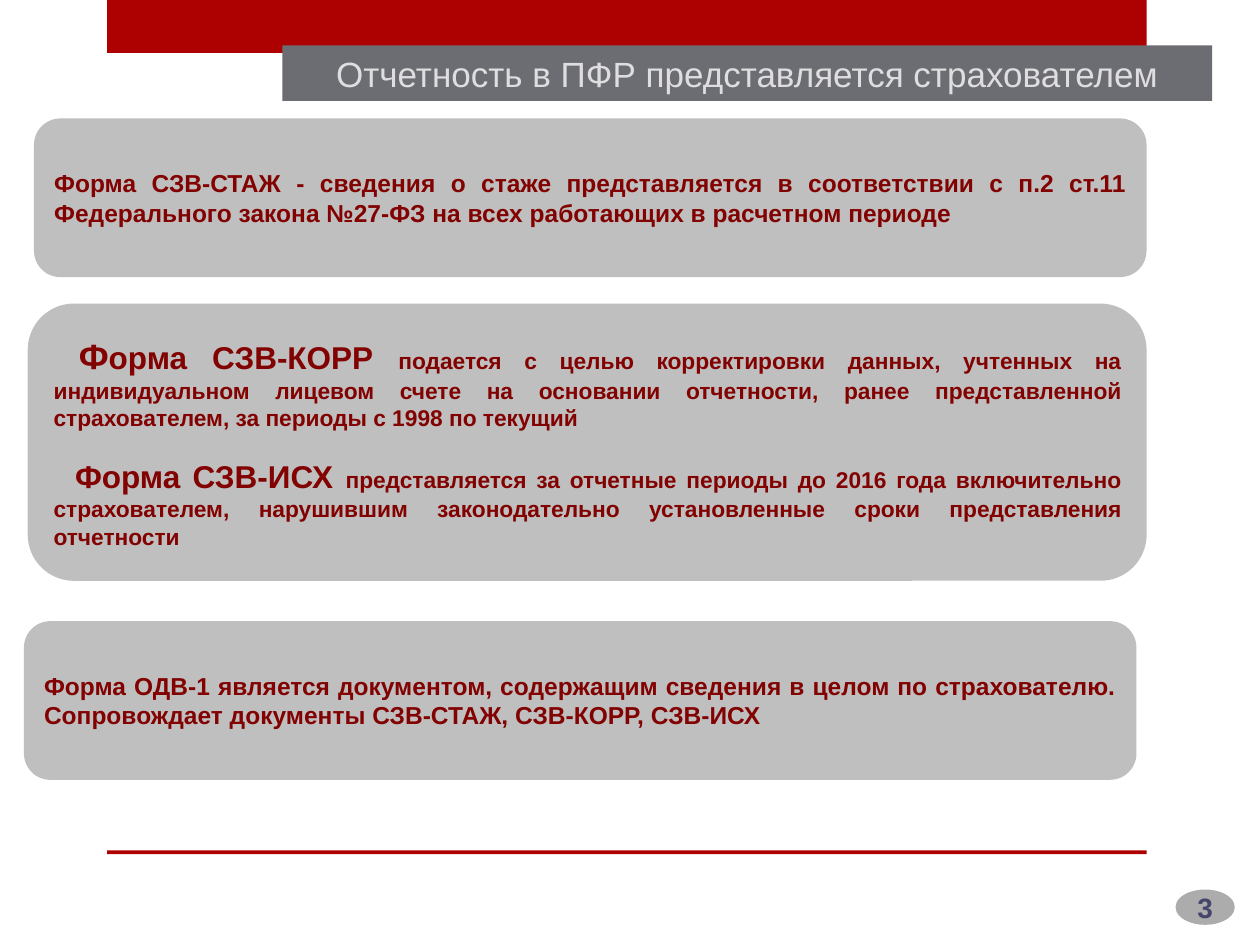
from dataclasses import dataclass

from pptx import Presentation
from pptx.dml.color import RGBColor
from pptx.enum.shapes import MSO_SHAPE
from pptx.enum.text import MSO_ANCHOR, MSO_AUTO_SIZE, PP_ALIGN
from pptx.util import Inches, Pt

SLIDE_WIDTH, SLIDE_HEIGHT = Inches(10), Inches(7.5)
COLUMNS, ROWS = 100, 75
RED, DARK_RED = "AD0101", "820101"
GRAY, PANEL_GRAY, BADGE_GRAY = "6C6C73", "BFBFBF", "ACACAC"
TITLE_COLOR, NUMBER_COLOR = "DEDEE0", "46466A"


@dataclass(frozen=True)
class Area:
    """A place on the slide grid, in columns and rows."""
    column: float
    row: float
    columns: float
    rows: float


@dataclass(frozen=True)
class Passage:
    """A paragraph made of (text, size) pieces."""
    pieces: tuple[tuple[str, int], ...]
    indent: float = 0
    space_before: float = 0


@dataclass(frozen=True)
class Panel:
    area: Area
    passages: tuple[Passage, ...]


BARS = (Area(8.5, 0, 82.5, 4.2), Area(8.5, 67.5, 82.5, 0.3))
TITLE_AREA = Area(22.4, 3.6, 73.8, 4.4)
BADGE_AREA = Area(93.3, 70.6, 4.7, 2.8)

PANELS = (
    Panel(Area(2.2, 24.1, 88.8, 22), (
        Passage((
            ("Ф", 20),
            ("орма СЗВ-КОРР ", 18),
            ("подается с целью корректировки данных, учтенных на индивидуальном "
             "лицевом счете на основании отчетности, ранее представленной "
             "страхователем, за периоды с 1998 по текущий", 13),
        ), indent=0.2),
        Passage((
            ("Форма СЗВ-ИСХ ", 18),
            ("представляется за отчетные периоды до 2016 года включительно "
             "страхователем, нарушившим законодательно установленные сроки "
             "представления отчетности", 13),
        ), indent=0.17, space_before=15),
    )),
    Panel(Area(1.9, 49.3, 88.3, 12.6), (
        Passage(((
            "Форма ОДВ-1 является документом, содержащим сведения в целом по "
            "страхователю. Сопровождает документы СЗВ-СТАЖ, СЗВ-КОРР, СЗВ-ИСХ", 14),)),
    )),
    Panel(Area(2.7, 9.4, 88.3, 12.6), (
        Passage(((
            "Форма СЗВ-СТАЖ - сведения о стаже представляется в соответствии с "
            "п.2 ст.11 Федерального закона №27-ФЗ на всех работающих в расчетном "
            "периоде", 14),)),
    )),
)


def color(value: str) -> RGBColor:
    return RGBColor.from_string(value)


def place(shape, area: Area) -> None:
    shape.left = round(SLIDE_WIDTH * area.column / COLUMNS)
    shape.top = round(SLIDE_HEIGHT * area.row / ROWS)
    shape.width = round(SLIDE_WIDTH * area.columns / COLUMNS)
    shape.height = round(SLIDE_HEIGHT * area.rows / ROWS)


def fill_shape(shape, fill: str) -> None:
    shape.fill.solid()
    shape.fill.fore_color.rgb = color(fill)
    shape.line.fill.background()


def add_block(slide, kind: MSO_SHAPE, area: Area, fill: str):
    shape = slide.shapes.add_shape(kind, 0, 0, 0, 0)
    place(shape, area)
    fill_shape(shape, fill)
    shape.shadow.inherit = False
    return shape


def add_text(paragraph, text: str, *, size: int, text_color: str,
             bold: bool = False, align: PP_ALIGN = PP_ALIGN.CENTER) -> None:
    paragraph.alignment = align
    run = paragraph.add_run()
    run.text = text
    run.font.name = "Arial"
    run.font.size = Pt(size)
    run.font.bold = bold
    run.font.color.rgb = color(text_color)


def add_panel(slide, panel: Panel) -> None:
    shape = add_block(slide, MSO_SHAPE.ROUNDED_RECTANGLE, panel.area, PANEL_GRAY)
    frame = shape.text_frame
    frame.word_wrap = True
    frame.vertical_anchor = MSO_ANCHOR.MIDDLE
    for index, passage in enumerate(panel.passages):
        paragraph = frame.add_paragraph() if index else frame.paragraphs[0]
        paragraph.space_before = Pt(passage.space_before)
        for text, size in passage.pieces:
            add_text(paragraph, text, size=size, text_color=DARK_RED,
                     bold=True, align=PP_ALIGN.JUSTIFY)
        properties = paragraph._p.get_or_add_pPr()
        properties.set("indent", str(Inches(passage.indent)))


def add_title(slide, text: str) -> None:
    title = slide.shapes.title
    place(title, TITLE_AREA)
    fill_shape(title, GRAY)
    frame = title.text_frame
    frame.auto_size = MSO_AUTO_SIZE.NONE
    frame.word_wrap = True
    frame.vertical_anchor = MSO_ANCHOR.MIDDLE
    add_text(frame.paragraphs[0], text, size=20, text_color=TITLE_COLOR)
    # Bring the title in front of the red bar.
    title.element.getparent().append(title.element)


def add_badge(slide, number: str) -> None:
    badge = add_block(slide, MSO_SHAPE.OVAL, BADGE_AREA, BADGE_GRAY)
    frame = badge.text_frame
    frame.word_wrap = False
    frame.vertical_anchor = MSO_ANCHOR.MIDDLE
    add_text(frame.paragraphs[0], number, size=16, text_color=NUMBER_COLOR, bold=True)


def main() -> None:
    presentation = Presentation()
    presentation.slide_width, presentation.slide_height = SLIDE_WIDTH, SLIDE_HEIGHT
    slide = presentation.slides.add_slide(presentation.slide_layouts[5])
    for bar in BARS:
        add_block(slide, MSO_SHAPE.RECTANGLE, bar, RED)
    add_title(slide, "Отчетность в ПФР представляется страхователем")
    for panel in PANELS:
        add_panel(slide, panel)
    add_badge(slide, "3")
    presentation.save("out.pptx")


if __name__ == "__main__":
    main()
